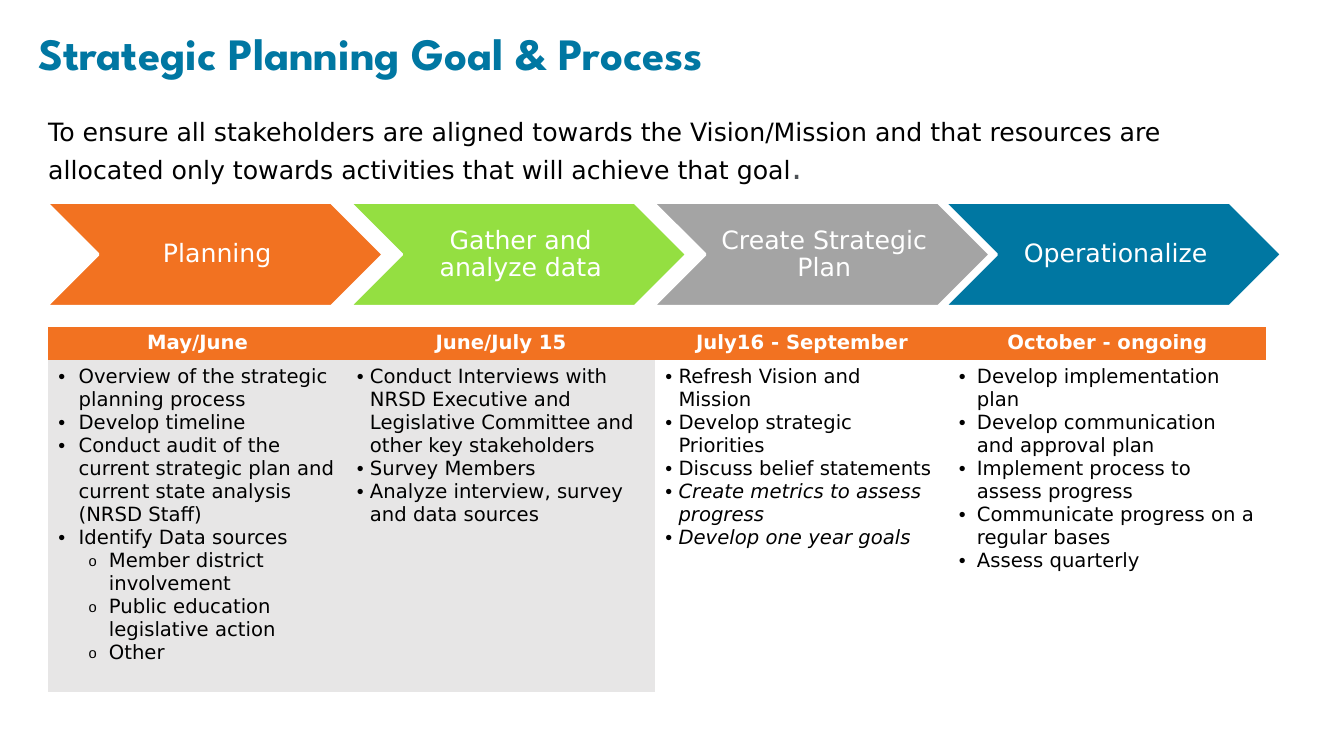
from pptx import Presentation
from pptx.dml.color import RGBColor
from pptx.enum.shapes import MSO_SHAPE as SHAPE
from pptx.enum.text import MSO_ANCHOR as ANCHOR, PP_ALIGN as ALIGN
from pptx.oxml.ns import qn
from pptx.util import Pt
from lxml.etree import SubElement

PX = 9144  # 100 px to the inch
HEAD_FONT, BODY_FONT = "League Spartan", "DejaVu Sans"
NO_STYLE = "{2D5ABB26-0587-4C30-8999-92F81FD0307C}"
COLORS = {
    "blue": "0077A2", "orange": "F27221", "green": "94DF41", "gray": "A4A4A4",
    "pale": "E7E6E6", "white": "FFFFFF", "black": "000000", "slate": "4D5156",
}

TITLE = "Strategic Planning Goal & Process"
GOAL = ("To ensure all stakeholders are aligned towards the Vision/Mission and that "
        "resources are allocated only towards activities that will achieve that goal")
# step name, left edge, colour
STEPS = [
    ("Planning", 46, "orange"),
    ("Gather and analyze data", 347, "green"),
    ("Create Strategic Plan", 648, "gray"),
    ("Operationalize", 937, "blue"),
]
# period, column width, bullet indent, cell fill, items as (text, kind)
PHASES = [
    ("May/June", 296, 20, "pale", [
        ("Overview of the strategic planning process", "item"),
        ("Develop timeline", "item"),
        ("Conduct audit of the current strategic plan and current state analysis "
         "(NRSD Staff)", "item"),
        ("Identify Data sources", "item"),
        ("Member district involvement", "sub"),
        ("Public education legislative action", "sub"),
        ("Other", "sub")]),
    ("June/July 15", 306, 13, "pale", [
        ("Conduct Interviews with NRSD Executive and Legislative Committee and "
         "other key stakeholders", "item"),
        ("Survey Members", "item"),
        ("Analyze interview, survey and data sources", "item")]),
    ("July16 - September", 291, 13, None, [
        ("Refresh Vision and Mission", "item"),
        ("Develop strategic Priorities", "item"),
        ("Discuss belief statements", "item"),
        ("Create metrics to assess progress", "italic"),
        ("Develop one year goals", "italic")]),
    ("October - ongoing", 315, 18, None, [
        ("Develop implementation plan", "item"),
        ("Develop communication and approval plan", "item"),
        ("Implement process to assess progress", "item"),
        ("Communicate progress on a regular bases", "item"),
        ("Assess quarterly", "item")]),
]


def px(*lengths):
    return [n * PX for n in lengths]


def rgb(name):
    return RGBColor.from_string(COLORS[name])


def add_run(p, text, size, color, font=BODY_FONT, bold=False, italic=False):
    r = p.add_run()
    r.text = text
    f = r.font
    f.name, f.size, f.bold, f.italic = font, Pt(size), bold, italic
    f.color.rgb = rgb(color)


def set_insets(tf, *insets):
    tf.margin_left, tf.margin_top, tf.margin_right, tf.margin_bottom = px(*insets)


def add_bullet(p, char, left, hang, percent=100):
    pPr = p._p.get_or_add_pPr()
    pPr.set("marL", str(left * PX))
    pPr.set("indent", str(-hang * PX))
    color = SubElement(pPr, qn("a:buClr"))
    SubElement(color, qn("a:srgbClr"), val=COLORS["black"])
    SubElement(pPr, qn("a:buSzPct"), val=str(percent * 1000))
    SubElement(pPr, qn("a:buFont"), typeface="Arial")
    SubElement(pPr, qn("a:buChar"), char=char)


def add_title(s, x, y, w, h):
    tf = s.shapes.add_textbox(*px(x, y, w, h)).text_frame
    tf.word_wrap = True
    set_insets(tf, 0, 0, 14, 0)
    p = tf.paragraphs[0]
    p.line_spacing = 0.8
    add_run(p, TITLE, 32, "blue", HEAD_FONT, bold=True)


def add_goal(s, x, y, w, h):
    tf = s.shapes.add_textbox(*px(x, y, w, h)).text_frame
    tf.word_wrap = True
    p = tf.paragraphs[0]
    add_run(p, GOAL, 18, "black")
    add_run(p, ".", 24, "slate")


def add_steps(s, y, w, h):
    for name, x, color in STEPS:
        sp = s.shapes.add_shape(SHAPE.CHEVRON, *px(x, y, w, h))
        sp.shadow.inherit = False
        sp.fill.solid()
        sp.fill.fore_color.rgb = rgb(color)
        sp.line.color.rgb = rgb("white")
        sp.line.width = Pt(2)
        tf = sp.text_frame
        tf.word_wrap = True
        tf.vertical_anchor = ANCHOR.MIDDLE
        set_insets(tf, 8, 3, 3, 3)
        p = tf.paragraphs[0]
        p.alignment = ALIGN.CENTER
        p.line_spacing = 0.9
        add_run(p, name, 18, "white")


def fill_cell(cell, color):
    if color:
        cell.fill.solid()
        cell.fill.fore_color.rgb = rgb(color)
    else:
        cell.fill.background()


def add_schedule(s, x, y, head_h, body_h):
    w = sum(phase[1] for phase in PHASES)
    frame = s.shapes.add_table(2, len(PHASES), *px(x, y, w, head_h + body_h))
    table = frame.table
    table.horz_banding = False
    table._tbl.tblPr.find(qn("a:tableStyleId")).text = NO_STYLE
    table.rows[0].height, table.rows[1].height = px(head_h, body_h)
    for col, (period, col_w, hang, color, items) in enumerate(PHASES):
        table.columns[col].width = col_w * PX
        # Period heading
        head, body = table.cell(0, col), table.cell(1, col)
        fill_cell(head, "orange")
        p = head.text_frame.paragraphs[0]
        p.alignment = ALIGN.CENTER
        add_run(p, period, 14, "white", bold=True)
        # Activities
        fill_cell(body, color)
        tf = body.text_frame
        for i, (text, kind) in enumerate(items):
            p = tf.add_paragraph() if i else tf.paragraphs[0]
            if kind == "sub":
                p.level = 1
                add_bullet(p, "o", 50, 20, 75)
            else:
                add_bullet(p, "•", hang, hang)
            add_run(p, text, 14, "black", italic=kind == "italic")


def main():
    prs = Presentation()
    prs.slide_width, prs.slide_height = px(1333, 750)
    s = prs.slides.add_slide(prs.slide_layouts[6])
    add_title(s, 38, 36, 1097, 74)
    add_goal(s, 38, 110, 1208, 81)
    add_steps(s, 201, 334, 103)
    add_schedule(s, 48, 324, 33, 329)
    prs.save("out.pptx")


if __name__ == "__main__":
    main()
